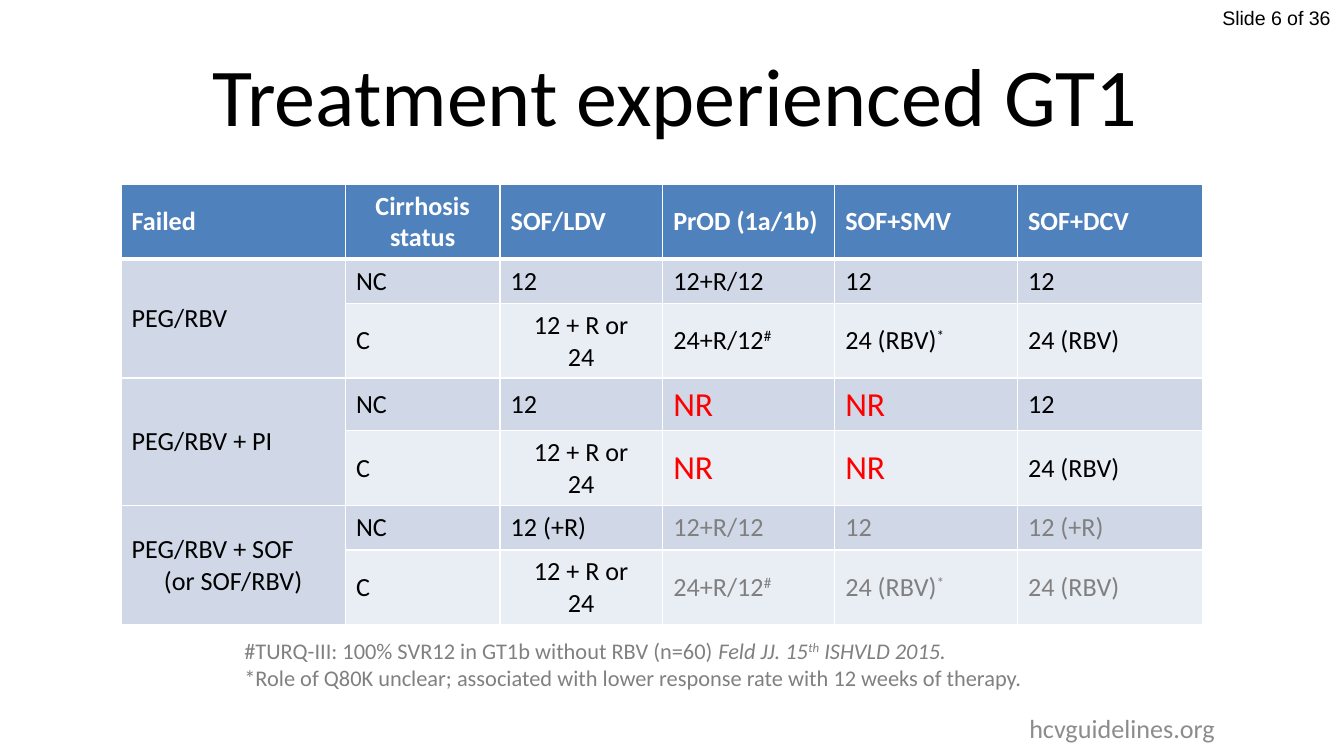
from lxml import etree
from pptx import Presentation
from pptx import util as u
from pptx.dml.color import RGBColor
from pptx.enum import text as t
from pptx.oxml import ns

WIDE = u.Inches(10)
HIGH = WIDE * 9 // 16
HUES = {"ink": "000000", "paper": "FFFFFF", "head": "4F81BD", "odd": "D0D8E8",
        "even": "E9EDF4", "alert": "FF0000", "mute": "808080", "site": "8C8C8C"}
LEFT, MID, RIGHT = t.PP_ALIGN.LEFT, t.PP_ALIGN.CENTER, t.PP_ALIGN.RIGHT

COLS = [1.67, 1.15, 1.21, 1.28, 1.36, 1.38]
ROWS = [0.48, 0.33, 0.48, 0.36, 0.48, 0.33, 0.48]
HEADS = ["Failed", "Cirrhosis status", "SOF/LDV",
         "PrOD (1a/1b)", "SOF+SMV", "SOF+DCV"]
SPLIT = "12 + R or\n24"
# Each group: failed therapy, non-cirrhotic doses, cirrhotic doses, hue of the last three columns
GROUPS = [
    ("PEG/RBV", ["12", "12+R/12", "12", "12"],
     [SPLIT, "24+R/12^#", "24 (RBV)^*", "24 (RBV)"], "ink"),
    ("PEG/RBV + PI", ["12", "NR", "NR", "12"],
     [SPLIT, "NR", "NR", "24 (RBV)"], "ink"),
    ("PEG/RBV + SOF\n(or SOF/RBV)", ["12 (+R)", "12+R/12", "12", "12 (+R)"],
     [SPLIT, "24+R/12^#", "24 (RBV)^*", "24 (RBV)"], "mute"),
]


def tint(name):
    return RGBColor.from_string(HUES[name])


def place(x, y, w, h):
    """Turn percentages of the slide into a box."""
    return tuple(int(part * side / 100)
                 for part, side in zip((x, y, w, h), (WIDE, HIGH) * 2))


def style(par, size, hue="ink", align=LEFT, bold=False, face="Calibri"):
    par.alignment = align
    font = par.font
    font.size, font.name, font.bold = u.Pt(size), face, bold
    font.color.rgb = tint(hue)


def write(par, words, slant=False):
    """Add runs; every second piece between ^ marks is raised."""
    for i, piece in enumerate(words.split("^")):
        if piece:
            run = par.add_run()
            run.text = piece
            if slant:
                run.font.italic = True
            if i % 2:
                run._r.get_or_add_rPr().set("baseline", "30000")


def label(slide, box, words, size, hue, align, face="Calibri"):
    frame = slide.shapes.add_textbox(*box).text_frame
    frame.word_wrap = True
    frame.vertical_anchor = t.MSO_ANCHOR.MIDDLE
    par = frame.paragraphs[0]
    write(par, words)
    style(par, size, hue, align, face=face)


def title(slide, box, words):
    head = slide.shapes.title
    head.left, head.top, head.width, head.height = box
    frame = head.text_frame
    frame.vertical_anchor = t.MSO_ANCHOR.MIDDLE
    write(frame.paragraphs[0], words)
    style(frame.paragraphs[0], 44, align=MID)


def edge(cell, **wide):
    """Draw white borders, one point unless a side is given its own width."""
    props = cell._tc.get_or_add_tcPr()
    for i, side in enumerate("LRTB"):
        line = etree.Element(ns.qn("a:ln" + side), w=str(u.Pt(wide.get(side, 1))))
        paint = etree.SubElement(line, ns.qn("a:solidFill"))
        etree.SubElement(paint, ns.qn("a:srgbClr"), val=HUES["paper"])
        props.insert(i, line)


def fill(cell, words, back, hue="ink", size=14, aligns=(LEFT,), bold=False, **wide):
    cell.fill.solid()
    cell.fill.fore_color.rgb = tint(back)
    cell.vertical_anchor = t.MSO_ANCHOR.MIDDLE
    cell.margin_left = cell.margin_right = u.Inches(0.08)
    cell.margin_top = cell.margin_bottom = u.Pt(3.25)
    edge(cell, **wide)
    frame = cell.text_frame
    for i, line in enumerate(words.split("\n")):
        par = frame.add_paragraph() if i else frame.paragraphs[0]
        write(par, line)
        style(par, size, hue, aligns[min(i, len(aligns) - 1)], bold)


def doses(slide, box):
    frame = slide.shapes.add_table(len(ROWS), len(COLS), *box)
    grid = frame.table
    for col, wide in zip(grid.columns, COLS):
        col.width = int(box[2] * wide / sum(COLS))
    for row, high in zip(grid.rows, ROWS):
        row.height = u.Inches(high)
    frame.height = box[3]
    for c, words in enumerate(HEADS):
        fill(grid.cell(0, c), words, "head", "paper", bold=True,
             aligns=(MID if c == 1 else LEFT,), B=3)
    for g, (failed, *pair, hue) in enumerate(GROUPS):
        top = 1 + 2 * g
        first = grid.cell(top, 0)
        first.merge(grid.cell(top + 1, 0))
        fill(first, failed, "odd", aligns=(LEFT, MID), T=1 if g else 3)
        edge(grid.cell(top + 1, 0))
        for r, (state, band, line) in enumerate(zip(("NC", "C"), ("odd", "even"), pair)):
            for c, words in enumerate([state] + line, 1):
                bad = words == "NR"
                fill(grid.cell(top + r, c), words, band,
                     "alert" if bad else hue if c > 2 else "ink",
                     18 if bad else 14, (MID if words == SPLIT else LEFT,),
                     T=1 if top + r > 1 else 3)


def notes(slide, box):
    frame = slide.shapes.add_textbox(*box).text_frame
    frame.word_wrap = False
    trial, role = frame.paragraphs[0], frame.add_paragraph()
    write(trial, "#TURQ-III: 100% SVR12 in GT1b without RBV (n=60) ")
    write(trial, "Feld JJ. 15^th^ ISHVLD 2015.", slant=True)
    write(role, "*Role of Q80K unclear; associated with lower response rate "
                "with 12 weeks of therapy.")
    for par in (trial, role):
        style(par, 12, "mute")


def main():
    deck = Presentation()
    deck.slide_width, deck.slide_height = WIDE, HIGH
    slide = deck.slides.add_slide(deck.slide_layouts[5])
    label(slide, place(83.3, -0.2, 16.7, 5), "Slide 6 of 36", 10.5, "ink", RIGHT, "Arial")
    title(slide, place(1.8, 4, 96.9, 16.7), "Treatment experienced GT1")
    label(slide, place(67.6, 93.7, 31.8, 5.3), "hcvguidelines.org", 14, "site", MID)
    doses(slide, place(9, 24.36, 80.5, 57.6))
    notes(slide, place(17.2, 83.4, 60.7, 8.9))
    deck.save("out.pptx")


if __name__ == "__main__":
    main()
